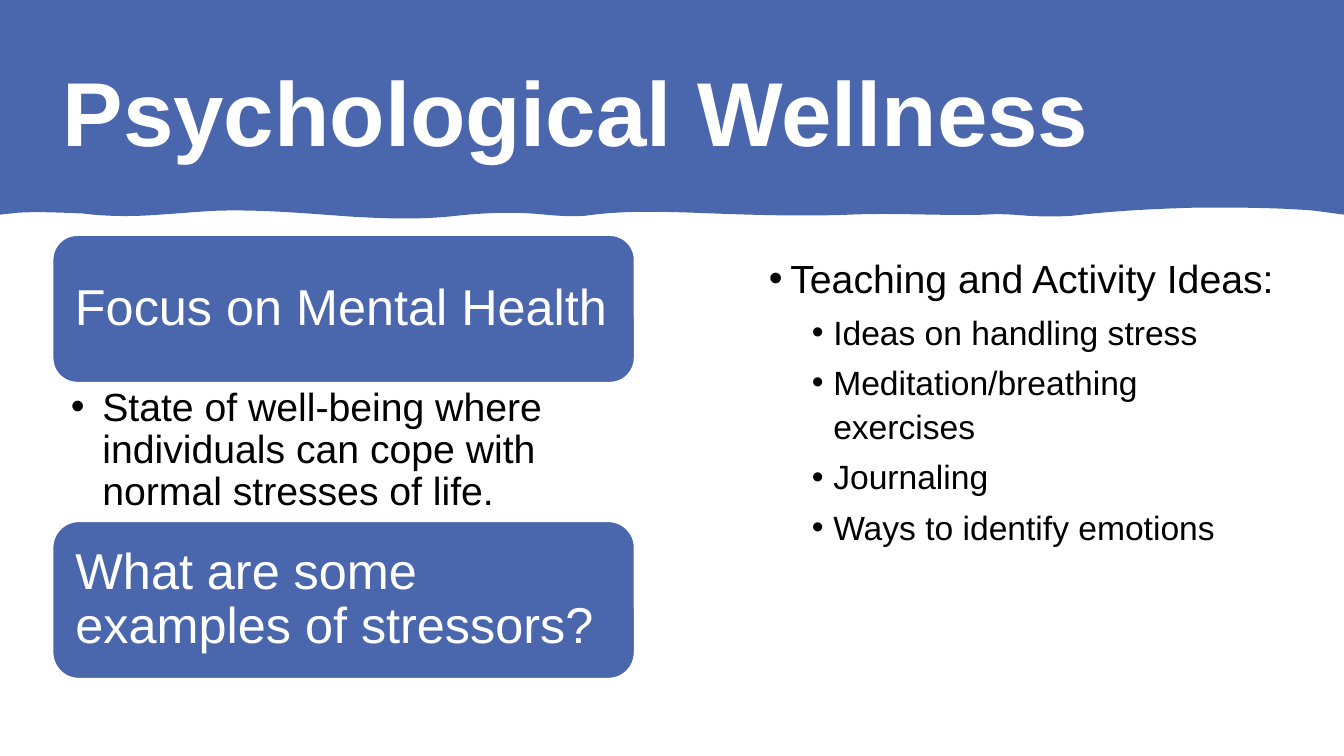
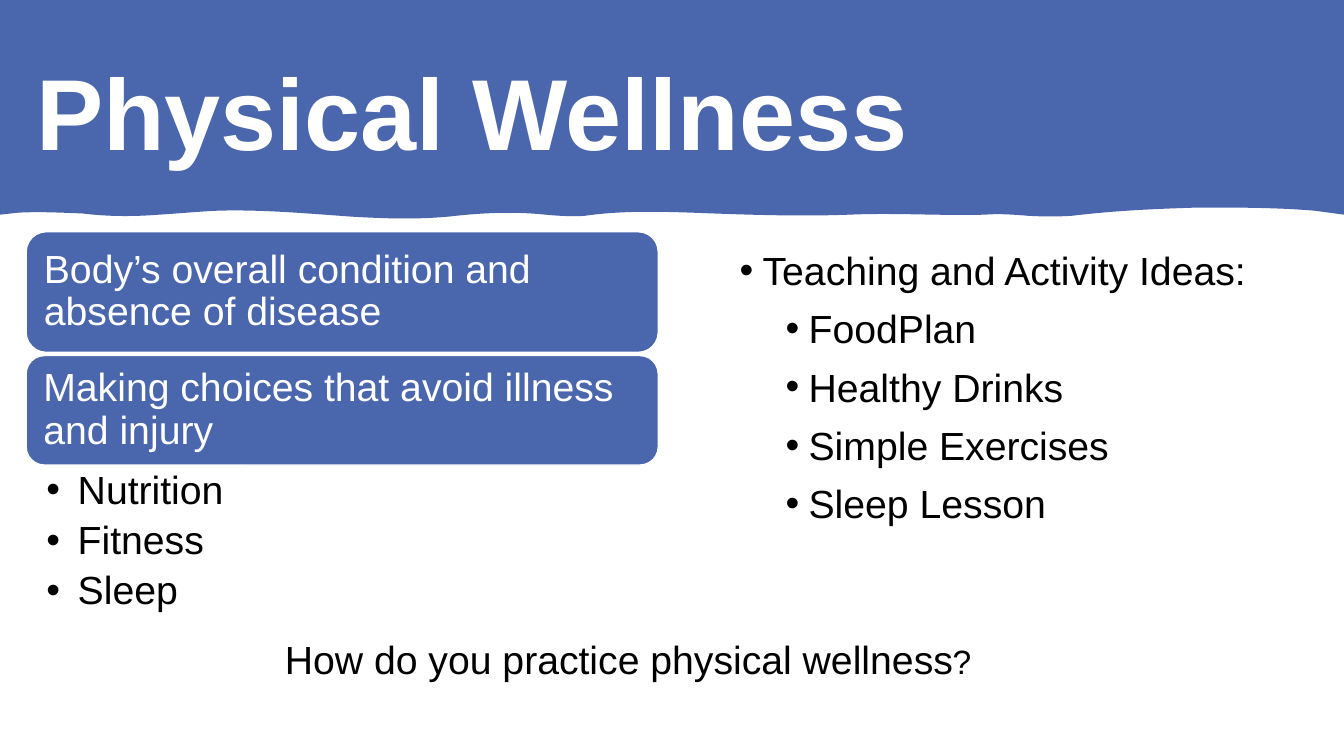
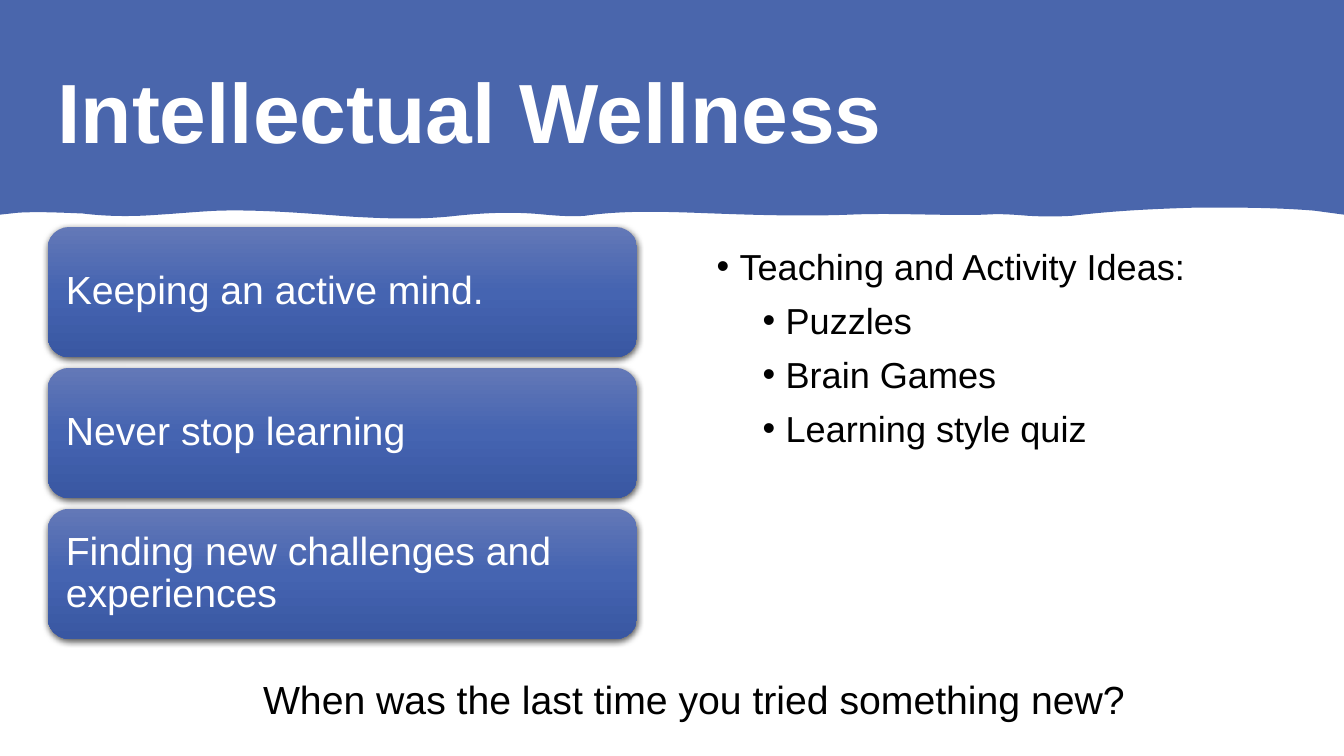
from pptx import Presentation
from pptx.dml.color import RGBColor
from pptx.enum.shapes import MSO_SHAPE
from pptx.enum.text import MSO_ANCHOR, PP_ALIGN
from pptx.oxml import parse_xml
from pptx.oxml.ns import nsdecls, qn
from pptx.oxml.xmlchemy import OxmlElement
from pptx.util import Cm, Pt

FONT = "Arial"
BLUE, WHITE, BLACK = "4A66AC", "FFFFFF", "000000"
GRADIENT = ((0, "6378B7"), (50, "4564B1"), (100, "3957A2"))
SLIDE_W, SLIDE_H = 33.87, 19.05
IDEAS = "Teaching and Activity Ideas:"
WAVE_START = (33.12, 5.31)
WAVE = (
    (30.23, 5.23, 5.23, 5.23), (27.0, 5.26, 5.31, 5.44),
    (25.93, 5.46, 5.46, 5.44), (24.82, 5.41, 5.38, 5.41),
    (21.41, 5.44, 5.36, 5.41), (17.45, 5.46, 5.41, 5.36),
    (14.73, 5.33, 5.31, 5.44), (13.74, 5.46, 5.44, 5.41),
    (11.48, 5.33, 5.36, 5.44), (8.86, 5.54, 5.51, 5.46),
    (5.51, 5.38, 5.28, 5.31), (4.01, 5.33, 5.38, 5.41),
    (2.08, 5.46, 5.46, 5.38), (0.46, 5.36, 5.33, 5.36),
)


def rgb(value):
    """Turn a hex string into a colour."""
    return RGBColor.from_string(value)


def cm_box(box):
    """Turn left, top, width and height in centimetres into lengths."""
    return [Cm(v) for v in box]


def paint(sp, color):
    """Give a shape a plain fill without line or shadow."""
    sp.shadow.inherit = False
    sp.fill.solid()
    sp.fill.fore_color.rgb = rgb(color)
    sp.line.fill.background()


def add_run(p, text, size, color=BLACK, bold=False):
    """Add one styled run to a paragraph."""
    r = p.add_run()
    r.text = text
    r.font.name, r.font.size, r.font.bold = FONT, Pt(size), bold
    r.font.color.rgb = rgb(color)


def set_bullet(p, margin, hang):
    """Give a paragraph a round bullet and a hanging indent."""
    pPr = p._p.get_or_add_pPr()
    pPr.set("marL", str(Cm(margin)))
    pPr.set("indent", str(-Cm(hang)))
    for tag, key, value in (("a:buFont", "typeface", FONT),
                            ("a:buChar", "char", "•")):
        el = OxmlElement(tag)
        el.set(key, value)
        pPr.append(el)


def add_text_frame(s, box):
    """Add a wrapping text box and return its text frame."""
    tf = s.shapes.add_textbox(*cm_box(box)).text_frame
    tf.word_wrap = True
    return tf


def add_paragraphs(tf, texts):
    """Yield one paragraph for each text with its index."""
    for i, text in enumerate(texts):
        yield i, tf.paragraphs[0] if i == 0 else tf.add_paragraph(), text


def curve_to(x0, x3, *ys):
    """Make a Bezier segment whose points are evenly spaced across."""
    xs = (x0 + (x3 - x0) * i / 3 for i in (1, 2, 3))
    pts = "".join(f'<a:pt x="{Cm(x)}" y="{Cm(y)}"/>' for x, y in zip(xs, ys))
    return parse_xml(f'<a:cubicBezTo {nsdecls("a")}>{pts}</a:cubicBezTo>')


def add_band(s):
    """Draw the blue top band with its wavy lower edge."""
    pts = [(SLIDE_W, 0), (SLIDE_W, 5.41), WAVE_START]
    first = len(pts)
    pts += [(w[0], w[-1]) for w in WAVE] + [(0, 5.41)]
    fb = s.shapes.build_freeform(0, 0)
    fb.add_line_segments([(Cm(x), Cm(y)) for x, y in pts], close=True)
    sp = fb.convert_to_shape()
    lines = list(sp._element.iter(qn("a:lnTo")))[first:]
    for line, (x0, _), wave in zip(lines, pts[first - 1:], WAVE):
        line.getparent().replace(line, curve_to(x0, *wave))
    paint(sp, BLUE)


def add_title(s, left, text, size):
    """Write the bold white title on the band."""
    tf = add_text_frame(s, (left, 0.93, 29.21, 3.68))
    tf.vertical_anchor = MSO_ANCHOR.MIDDLE
    add_run(tf.paragraphs[0], text, size, WHITE, True)


def add_glossy_fill(sp):
    """Give a shape the vertical gradient and a soft shadow."""
    sp.line.fill.background()
    sp.fill.background()
    stops = "".join(
        f'<a:gs pos="{pos * 1000}"><a:srgbClr val="{color}"/></a:gs>'
        for pos, color in GRADIENT)
    spPr = sp._element.spPr
    spPr.replace(spPr.find(qn("a:noFill")), parse_xml(
        f'<a:gradFill {nsdecls("a")} rotWithShape="1"><a:gsLst>{stops}</a:gsLst>'
        '<a:lin ang="5400000" scaled="0"/></a:gradFill>'))
    spPr.find(qn("a:effectLst")).append(parse_xml(
        f'<a:outerShdw {nsdecls("a")} blurRad="{Pt(4.5)}" dist="{Pt(1.5)}" '
        'dir="5400000" algn="ctr" rotWithShape="0"><a:srgbClr val="000000">'
        '<a:alpha val="63000"/></a:srgbClr></a:outerShdw>'))


def add_card(s, box, text, size=28, inset=0.3, glossy=False):
    """Draw a rounded card with white text."""
    sp = s.shapes.add_shape(MSO_SHAPE.ROUNDED_RECTANGLE, *cm_box(box))
    paint(sp, BLUE)
    if glossy:
        add_glossy_fill(sp)
    else:
        sp.line.color.rgb = rgb(WHITE)
        sp.line.width = Pt(1)
    tf = sp.text_frame
    tf.word_wrap = True
    tf.vertical_anchor = MSO_ANCHOR.MIDDLE
    tf.margin_left = tf.margin_right = Cm(inset)
    tf.margin_top = tf.margin_bottom = Cm(inset)
    p = tf.paragraphs[0]
    p.alignment = PP_ALIGN.LEFT
    p.line_spacing = 0.9
    add_run(p, text, size, WHITE)


def add_details(s, box, texts, left, top, right):
    """List the points that belong to the card above."""
    tf = add_text_frame(s, box)
    tf.margin_left, tf.margin_right = Cm(left), Cm(right)
    tf.margin_top = tf.margin_bottom = Cm(top)
    for _, p, text in add_paragraphs(tf, texts):
        p.line_spacing, p.space_after = 0.9, Pt(5.6)
        set_bullet(p, 0.79, 0.79)
        add_run(p, text, 28)


def add_ideas(s, box, ideas, size, sub_size, hang=0.58, before=9.2):
    """List the teaching ideas under their heading."""
    tf = add_text_frame(s, box)
    for i, p, text in add_paragraphs(tf, (IDEAS, *ideas)):
        p.line_spacing = 1.1
        p.space_before = Pt(before / 2 if i else before)
        set_bullet(p, 3 * hang if i else hang, hang)
        add_run(p, text, sub_size if i else size)


def add_question(s, box, *runs):
    """Write the closing question from text and size pairs."""
    p = add_text_frame(s, box).paragraphs[0]
    for text, size in runs:
        add_run(p, text, size)


def new_slide(prs, left, title, size):
    """Add a blank slide with backdrop, band and title."""
    s = prs.slides.add_slide(prs.slide_layouts[6])
    paint(s.shapes.add_shape(MSO_SHAPE.RECTANGLE, 0, 0, Cm(SLIDE_W),
                             Cm(SLIDE_H)), WHITE)
    add_band(s)
    add_title(s, left, title, size)
    return s


def psychological_slide(prs):
    """Build the slide on psychological wellness."""
    x, w = 1.33, 14.66
    s = new_slide(prs, x, "Psychological Wellness", 64.8)
    add_card(s, (x, 5.93, w, 3.71), "Focus on Mental Health", 36, 0.38)
    add_details(s, (x, 9.63, w, 3.5), (
        "State of well-being where individuals can cope with normal "
        "stresses of life.",), 0.46, 0.13, 0.71)
    add_card(s, (x, 13.14, w, 3.96), "What are some examples of stressors?",
             36, 0.38)
    add_ideas(s, (19.13, 6.17, 13.41, 11.3), (
        "Ideas on handling stress", "Meditation/breathing exercises",
        "Journaling", "Ways to identify emotions"), 28, 24, 0.54, 8.5)


def physical_slide(prs):
    """Build the slide on physical wellness."""
    x, w = 0.66, 15.93
    s = new_slide(prs, x, "Physical Wellness", 72)
    add_card(s, (x, 5.84, w, 3.04),
             "Body’s overall condition and absence of disease")
    add_card(s, (x, 8.96, w, 2.76),
             "Making choices that avoid illness and injury")
    add_details(s, (x, 11.76, w, 3.58), ("Nutrition", "Fitness", "Sleep"),
                0.51, 0.1, 0.56)
    add_ideas(s, (18.39, 5.97, 14.15, 11.73), (
        "FoodPlan", "Healthy Drinks", "Simple Exercises", "Sleep Lesson"),
        28, 28)
    add_question(s, (6.93, 15.88, 19.33, 1.45),
                 ("How do you practice physical wellness", 28), ("?", 24))


def intellectual_slide(prs):
    """Build the slide on intellectual wellness."""
    x, w = 1.2, 14.86
    s = new_slide(prs, x, "Intellectual Wellness", 60)
    for i, text in enumerate((
            "Keeping an active mind.", "Never stop learning",
            "Finding new challenges and experiences")):
        add_card(s, (x, 5.72 + 3.55 * i, w, 3.28), text, glossy=True)
    add_ideas(s, (17.81, 5.92, 13.39, 10.97), (
        "Puzzles", "Brain Games", "Learning style quiz"), 25.8, 25.8)
    add_question(s, (6.38, 16.89, 22.89, 1.45),
                 ("When was the last time you tried something new?", 28))


def main():
    """Build and save the presentation."""
    prs = Presentation()
    prs.slide_width, prs.slide_height = Cm(SLIDE_W), Cm(SLIDE_H)
    psychological_slide(prs)
    physical_slide(prs)
    intellectual_slide(prs)
    prs.save("out.pptx")


if __name__ == "__main__":
    main()
